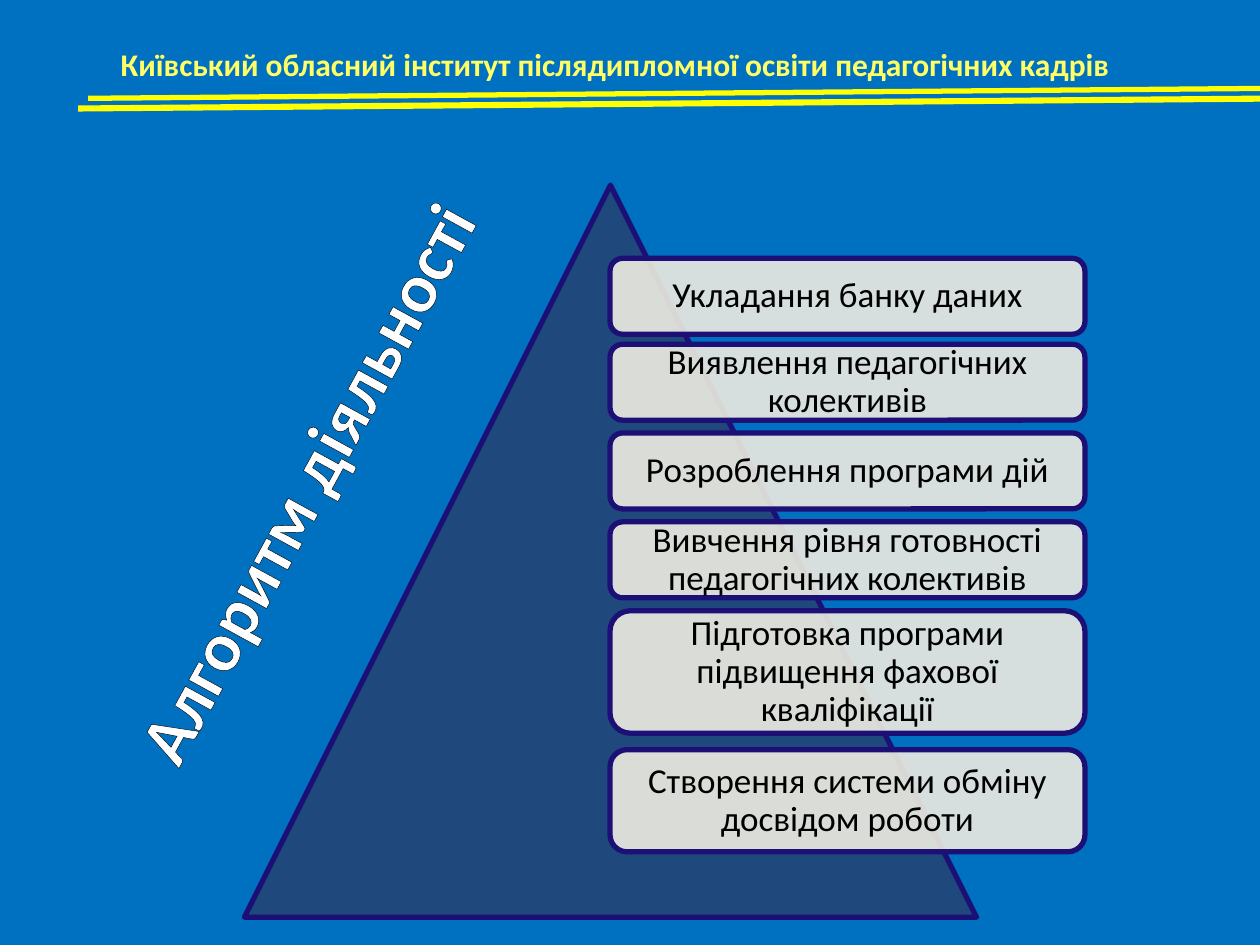
from lxml import etree
from pptx import Presentation
from pptx.dml.color import RGBColor
from pptx.enum import shapes, text
from pptx.oxml import ns
from pptx.util import Pt

HEAD = "Київський обласний інститут післядипломної освіти педагогічних кадрів"
TITLE = "Алгоритм діяльності"
STEPS = [  # text, top, height
    ("Укладання банку даних", 147.6, 43.4),
    ("Виявлення педагогічних колективів", 196.7, 43.4),
    ("Розроблення програми дій", 247.4, 43.4),
    ("Вивчення рівня готовності педагогічних колективів", 298.2, 43.4),
    ("Підготовка програми підвищення фахової кваліфікації", 349, 70),
    ("Створення системи обміну досвідом роботи", 428.4, 58.4),
]
RULES = [  # start x, start y, end x, end y, width
    (50.4, 56.2, 736.6, 50.4, 3),
    (44.6, 62, 742.3, 56.2, 3.5),
]
STEP_X, STEP_W = 348.6, 271.4
COLORS = {"back": "0070C0", "peak": "1F497D", "edge": "1C1076", "step": "EEECE1",
          "rule": "FFFF00", "head": "FFFF66", "title": "FFFFFF", "ink": "000000"}


def color(name):
    return RGBColor.from_string(COLORS[name])


def sub(parent, tag, **attrs):
    return etree.SubElement(parent, ns.qn(tag), attrs)


def write(shape, words, size, ink, bold=False, align="CENTER", **frame):
    tf = shape.text_frame
    for key, value in frame.items():
        setattr(tf, key, value)
    para = tf.paragraphs[0]
    para.alignment = getattr(text.PP_ALIGN, align)
    run = para.add_run()
    run.text = words
    for key, value in {"name": "Calibri", "size": Pt(size), "bold": bold}.items():
        setattr(run.font, key, value)
    run.font.color.rgb = color(ink)
    return run


def add_solid(kind, box, fill):
    shape = slide.shapes.add_shape(kind, *map(Pt, box))
    shape.shadow.inherit = False
    shape.fill.solid()
    shape.fill.fore_color.rgb = color(fill)
    shape.line.color.rgb = color("edge")
    shape.line.width = Pt(3)
    return shape


prs = Presentation()
prs.slide_width, prs.slide_height = Pt(720), Pt(540)
slide = prs.slides.add_slide(prs.slide_layouts[6])
slide.background.fill.solid()
slide.background.fill.fore_color.rgb = color("back")

# Slanted title with outlined letters
title = slide.shapes.add_textbox(Pt(-40.3), Pt(247.7), Pt(428.4), Pt(55.4))
title.rotation = 298.7
run = write(title, TITLE, 40, "title", bold=True, word_wrap=True)
props = run.font.fill._xPr
edge = etree.Element(ns.qn("a:ln"), w=str(Pt(1.4)))
sub(sub(edge, "a:solidFill"), "a:srgbClr", val=COLORS["ink"])
props.insert(0, edge)

# Pyramid and its steps
add_solid(shapes.MSO_SHAPE.ISOSCELES_TRIANGLE, (139.7, 105.8, 418.3, 418.3), "peak")
pads = {"margin_" + side: Pt(6) for side in ("left", "right", "top", "bottom")}
for words, top, height in STEPS:
    step = add_solid(shapes.MSO_SHAPE.ROUNDED_RECTANGLE,
                     (STEP_X, top, STEP_W, height), "step")
    tint = step.fill._xPr.find(ns.qn("a:solidFill"))[0]
    sub(tint, "a:alpha", val="90000")
    write(step, words, 20, "ink", word_wrap=True,
          vertical_anchor=text.MSO_ANCHOR.MIDDLE, **pads)
    step.text_frame.paragraphs[0].line_spacing = 0.9

# Header rules and name
for *ends, width in RULES:
    rule = slide.shapes.add_connector(shapes.MSO_CONNECTOR.STRAIGHT, *map(Pt, ends))
    rule.line.color.rgb = color("rule")
    rule.line.width = Pt(width)
    sub(rule._element.spPr, "a:effectLst")
head = slide.shapes.add_textbox(Pt(61.9), Pt(22.3), Pt(584.6), Pt(28.8))
write(head, HEAD, 18, "head", bold=True, align="LEFT", word_wrap=False)

prs.save("out.pptx")
